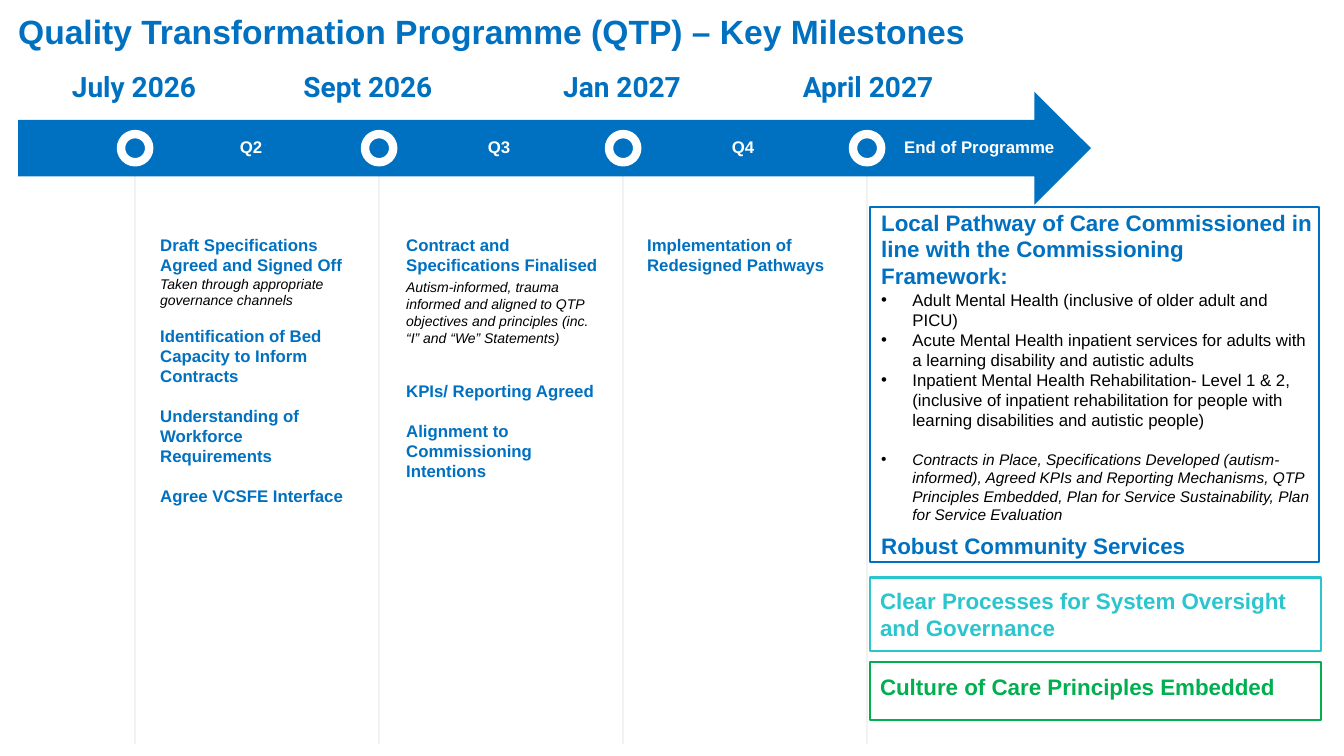
from dataclasses import dataclass

from lxml import etree
from pptx import Presentation
from pptx.dml.color import RGBColor
from pptx.enum.shapes import MSO_CONNECTOR, MSO_SHAPE
from pptx.enum.text import MSO_ANCHOR, MSO_AUTO_SIZE, PP_ALIGN
from pptx.oxml.ns import qn
from pptx.util import Inches, Pt

LEFT, CENTER = PP_ALIGN.LEFT, PP_ALIGN.CENTER
TOP, MIDDLE, BOTTOM = MSO_ANCHOR.TOP, MSO_ANCHOR.MIDDLE, MSO_ANCHOR.BOTTOM
NO_AUTOFIT = MSO_AUTO_SIZE.NONE
RECTANGLE, ELLIPSE, ARROW = MSO_SHAPE.RECTANGLE, MSO_SHAPE.OVAL, MSO_SHAPE.RIGHT_ARROW
STRAIGHT = MSO_CONNECTOR.STRAIGHT


@dataclass(frozen=True)
class Theme:
    blue: str = "0070C0"
    teal: str = "2BC5CD"
    green: str = "00B050"
    white: str = "FFFFFF"
    black: str = "000000"
    guide: str = "F2F2F2"
    font: str = "Arial"
    date_font: str = "Roboto"
    title: float = 24
    date: float = 20
    heading: float = 16
    body: float = 12
    outcome: float = 11
    note: float = 10
    outline: float = 1.5
    ring: float = 6


THEME = Theme()
INSETS = (0.1, 0.05, 0.1, 0.05)  # left, top, right, bottom


def style(size, color, bold=True, italic=False, font=THEME.font):
    return {"name": font, "size": Pt(size), "bold": bold, "italic": italic,
            "color": color}


HEADING = style(THEME.heading, THEME.blue)
MILESTONE = style(THEME.body, THEME.blue)
NOTE = style(THEME.note, THEME.black, bold=False, italic=True)
SERVICE = style(THEME.body, THEME.black, bold=False)
OUTCOME = style(THEME.outcome, THEME.black, bold=False, italic=True)
ON_ARROW = style(THEME.body, THEME.white)
DATE = style(THEME.date, THEME.blue, font=THEME.date_font)


class MilestoneSlide:
    def __init__(self, deck, theme):
        self.theme = theme
        self.slide = deck.slides.add_slide(deck.slide_layouts[5])
        self.shapes = self.slide.shapes

    def title(self, text, x, y, w, h):
        holder = self.shapes.title
        position = {"left": x, "top": y, "width": w, "height": h}
        for name, value in position.items():
            setattr(holder, name, Inches(value))
        self.fill_text(holder, [(text, style(self.theme.title, self.theme.blue), 0, False)],
                       anchor=MIDDLE)

    def shape(self, kind, x, y, w, h, fill, line=None, weight=THEME.outline):
        shape = self.shapes.add_shape(kind, Inches(x), Inches(y), Inches(w), Inches(h))
        shape.shadow.inherit = False
        shape.fill.solid()
        shape.fill.fore_color.rgb = RGBColor.from_string(fill)
        if line:
            shape.line.color.rgb = RGBColor.from_string(line)
            shape.line.width = Pt(weight)
        else:
            shape.line.fill.background()
        return shape

    def guide(self, x, top, bottom):
        guide = self.shapes.add_connector(STRAIGHT, Inches(x), Inches(top),
                                          Inches(x), Inches(bottom))
        guide.line.color.rgb = RGBColor.from_string(self.theme.guide)
        guide.line.width = Pt(self.theme.outline)
        etree.SubElement(guide._element.spPr, qn("a:effectLst"))

    def text(self, x, y, w, h, paragraphs, **layout):
        box = self.shapes.add_textbox(Inches(x), Inches(y), Inches(w), Inches(h))
        self.fill_text(box, paragraphs, **layout)

    def panel(self, x, y, w, h, line, paragraphs, **layout):
        box = self.shape(RECTANGLE, x, y, w, h, self.theme.white, line)
        self.fill_text(box, paragraphs, **layout)

    def fill_text(self, shape, paragraphs, anchor=TOP, align=LEFT, insets=INSETS,
                  spacing=1.0):
        """Each paragraph is (text, style, space before in points, bulleted)."""
        frame = shape.text_frame
        left, top, right, bottom = map(Inches, insets)
        frame_format = {"word_wrap": True, "auto_size": NO_AUTOFIT,
                        "vertical_anchor": anchor, "margin_left": left,
                        "margin_top": top, "margin_right": right,
                        "margin_bottom": bottom}
        for name, value in frame_format.items():
            setattr(frame, name, value)
        for index, (text, text_style, before, bulleted) in enumerate(paragraphs):
            paragraph = frame.add_paragraph() if index else frame.paragraphs[0]
            if bulleted:
                self.bullet(paragraph)
            paragraph_format = {"alignment": align, "space_before": Pt(before),
                                "line_spacing": spacing}
            for name, value in paragraph_format.items():
                setattr(paragraph, name, value)
            run = paragraph.add_run()
            run.text = text
            for name, value in text_style.items():
                if name == "color":
                    run.font.color.rgb = RGBColor.from_string(value)
                else:
                    setattr(run.font, name, value)

    def bullet(self, paragraph):
        properties = paragraph._p.get_or_add_pPr()
        properties.set("marL", str(Inches(0.31)))
        properties.set("indent", str(-Inches(0.31)))
        etree.SubElement(properties, qn("a:buFont"), typeface=self.theme.font)
        etree.SubElement(properties, qn("a:buChar"), char="•")


def main():
    deck = Presentation()
    deck.slide_width, deck.slide_height = Inches(13.33), Inches(7.5)
    page = MilestoneSlide(deck, THEME)
    page.title("Quality Transformation Programme (QTP) – Key Milestones",
               0.08, 0.06, 10.33, 0.5)

    # Timeline: guides, arrow and markers share evenly spaced centres
    axis_y, marker_size, first_centre, centre_step = 1.47, 0.28, 1.34, 2.42
    centres = [first_centre + centre_step * step for step in range(4)]
    for centre in centres:
        page.guide(centre, axis_y, 7.38)
    page.shape(ARROW, 0.18, axis_y - 0.56, 10.64, 1.12, THEME.blue)
    for centre in centres:
        page.shape(ELLIPSE, centre - marker_size / 2, axis_y - marker_size / 2,
                   marker_size, marker_size, THEME.blue, THEME.white, THEME.ring)

    # Dates above the arrow
    dates = [("July 2026", 0.18), ("Sept 2026", 2.5),
             ("Jan 2027", 5.02), ("April 2027", 7.46)]
    for date, x in dates:
        page.text(x, 0.07, 2.3, 1.12, [(date, DATE, 0, False)], anchor=BOTTOM,
                  align=CENTER, insets=(0.16,) * 4, spacing=0.9)

    # Labels on the arrow
    periods = [("Q2", 2.03, 0.92, CENTER), ("Q3", 4.49, 0.92, CENTER),
               ("Q4", 6.91, 0.92, CENTER), ("End of Programme", 8.87, 2.14, LEFT)]
    for period, x, width, align in periods:
        page.text(x, 1.31, width, 0.3, [(period, ON_ARROW, 0, False)], align=align)

    # Milestones under each quarter
    quarter_milestones = [
        (1.49, 2.83, [
            ("Draft Specifications Agreed and Signed Off", MILESTONE, 0, False),
            ("Taken through appropriate governance channels", NOTE, 0, False),
            ("Identification of Bed Capacity to Inform Contracts", MILESTONE, 12, False),
            ("Understanding of Workforce Requirements", MILESTONE, 14, False),
            ("Agree VCSFE Interface", MILESTONE, 14, False)]),
        (3.93, 2.57, [
            ("Contract and Specifications Finalised", MILESTONE, 0, False),
            ("Autism-informed, trauma informed and aligned to QTP objectives and "
             "principles (inc. “I” and “We” Statements)", NOTE, 2.5, False),
            ("KPIs/ Reporting Agreed", MILESTONE, 25, False),
            ("Alignment to Commissioning Intentions", MILESTONE, 14, False)]),
        (6.32, 0.5, [
            ("Implementation of Redesigned Pathways", MILESTONE, 0, False)]),
    ]
    for x, height, milestones in quarter_milestones:
        page.text(x, 2.28, 2.15, height, milestones)

    # End-of-programme outcomes
    page.panel(8.63, 2.05, 4.45, 3.53, THEME.blue, [
        ("Local Pathway of Care Commissioned in line with the Commissioning "
         "Framework:", HEADING, 0, False),
        ("Adult Mental Health (inclusive of older adult and PICU)", SERVICE, 0, True),
        ("Acute Mental Health inpatient services for adults with a learning "
         "disability and autistic adults", SERVICE, 0, True),
        ("Inpatient Mental Health Rehabilitation- Level 1 & 2, (inclusive of "
         "inpatient rehabilitation for people with learning disabilities and "
         "autistic people)", SERVICE, 0, True),
        ("Contracts in Place, Specifications Developed (autism-informed), Agreed "
         "KPIs and Reporting Mechanisms, QTP Principles Embedded, Plan for Service "
         "Sustainability, Plan for Service Evaluation", OUTCOME, 14, True),
        ("Robust Community Services", HEADING, 6, False),
    ], insets=(0.11, 0.02, 0.06, 0))
    page.panel(8.63, 5.73, 4.47, 0.73, THEME.teal, [
        ("Clear Processes for System Oversight and Governance",
         style(THEME.heading, THEME.teal), 0, False)], anchor=MIDDLE)
    page.panel(8.63, 6.57, 4.47, 0.57, THEME.green, [
        ("Culture of Care Principles Embedded",
         style(THEME.heading, THEME.green), 0, False)],
        anchor=MIDDLE, insets=(0.1, 0.05, 0.1, 0.13))

    deck.save("out.pptx")


if __name__ == "__main__":
    main()
